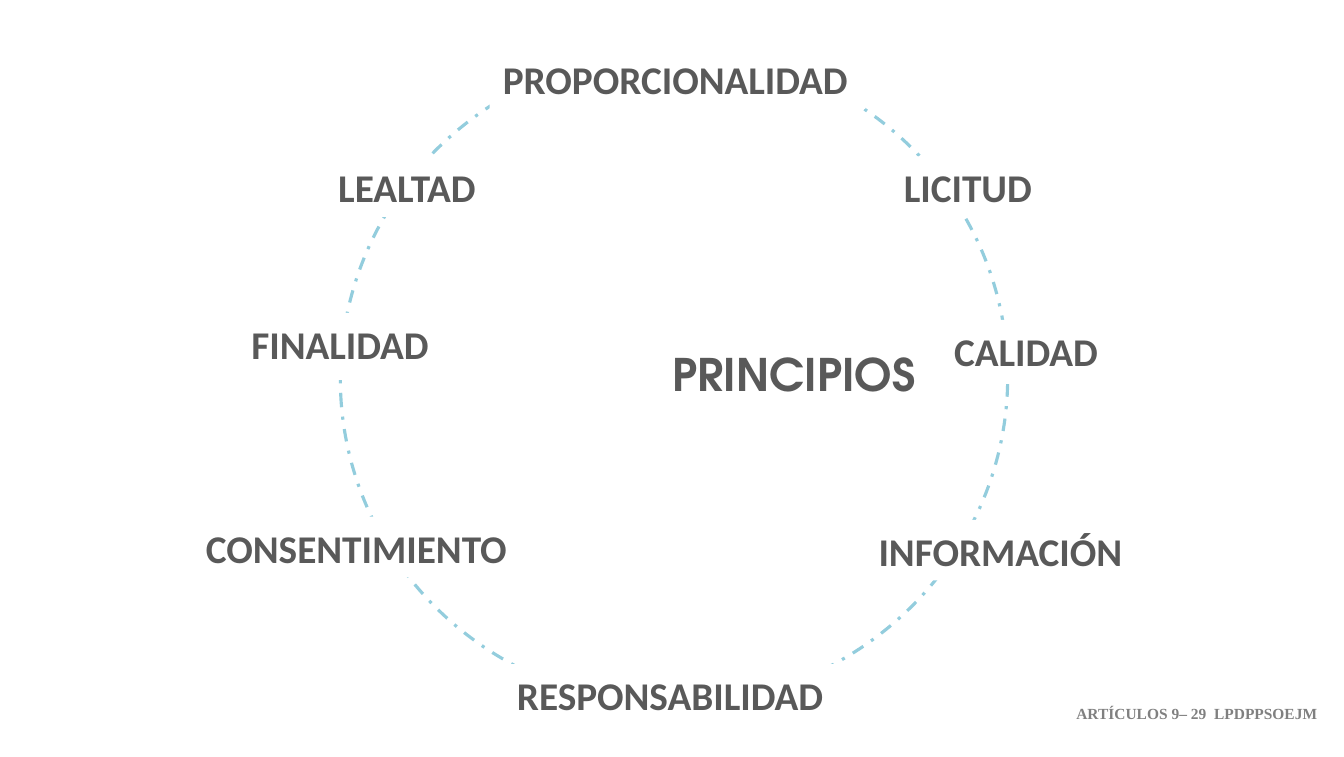
import pptx
import pptx.dml.color
import pptx.enum.dml
import pptx.enum.shapes
import pptx.enum.text
import pptx.util

RGBColor = pptx.dml.color.RGBColor
Inches = pptx.util.Inches
Pt = pptx.util.Pt
MSO_SHAPE = pptx.enum.shapes.MSO_SHAPE
PP_ALIGN = pptx.enum.text.PP_ALIGN
MSO_ANCHOR = pptx.enum.text.MSO_ANCHOR

WHITE = RGBColor(0xFF, 0xFF, 0xFF)
DARK_GREY = RGBColor(0x59, 0x59, 0x59)
MID_GREY = RGBColor(0x80, 0x80, 0x80)
LIGHT_BLUE = RGBColor(0x93, 0xCD, 0xDD)

SLIDE_WIDTH = Inches(13.31)
SLIDE_HEIGHT = Inches(7.5)
LABEL_HEIGHT = 8

# Principles around the ring: text, left, top, width (percent of the slide)
PRINCIPLES = [
    ("LICITUD", 66.27, 20.67, 11.65),
    ("CALIDAD", 70.02, 42.27, 12.85),
    ("CONSENTIMIENTO", 14.35, 68.27, 24.64),
    ("LEALTAD", 24.19, 20.67, 12.4),
    ("PROPORCIONALIDAD", 36.44, 6.4, 27.95),
    ("INFORMACIÓN", 64.39, 68.67, 20.36),
    ("RESPONSABILIDAD", 37.49, 87.73, 25.02),
    ("FINALIDAD", 17.73, 41.33, 15.4),
]


def area(left, top, width, height):
    """Turn percentages of the slide into lengths."""
    return (int(SLIDE_WIDTH * left / 100), int(SLIDE_HEIGHT * top / 100),
            int(SLIDE_WIDTH * width / 100), int(SLIDE_HEIGHT * height / 100))


def write(box, text, font_name, size, color, align=PP_ALIGN.LEFT,
          anchor=MSO_ANCHOR.TOP, wrap=False):
    frame = box.text_frame
    frame.text = text
    frame.word_wrap = wrap
    frame.vertical_anchor = anchor
    frame.margin_left = frame.margin_right = Inches(0.13)
    frame.margin_top = frame.margin_bottom = Inches(0.07)
    para = frame.paragraphs[0]
    para.alignment = align
    span = para.runs[0]
    span.font.name = font_name
    span.font.size = Pt(size)
    span.font.bold = True
    span.font.color.rgb = color
    return span


def add_ring(page):
    ring = page.shapes.add_shape(MSO_SHAPE.OVAL, *area(25.32, 6.8, 49.66, 86.27))
    ring.shadow.inherit = False
    ring.rotation = 355.3
    ring.fill.background()
    ring.line.color.rgb = LIGHT_BLUE
    ring.line.width = Pt(2.25)
    ring.line.dash_style = pptx.enum.dml.MSO_LINE.DASH_DOT


def add_principle(page, text, left, top, width):
    box = page.shapes.add_shape(MSO_SHAPE.RECTANGLE,
                                *area(left, top, width, LABEL_HEIGHT))
    box.shadow.inherit = False
    box.fill.solid()
    box.fill.fore_color.rgb = WHITE
    box.line.fill.background()
    write(box, text, "Calibri", 28, DARK_GREY)


def main():
    deck = pptx.Presentation()
    deck.slide_width = SLIDE_WIDTH
    deck.slide_height = SLIDE_HEIGHT
    page = deck.slides.add_slide(deck.slide_layouts[6])

    # Source note
    note = page.shapes.add_textbox(*area(79.11, 92.13, 20.06, 6.67))
    write(note, "ARTÍCULOS 9– 29  LPDPPSOEJM", "Times New Roman", 11, MID_GREY)

    # Central title in small capitals
    title = page.shapes.add_textbox(*area(32.31, 41.73, 35.46, 15.33))
    span = write(title, "PRINCIPIOS", "TeX Gyre Adventor", 32, DARK_GREY,
                 PP_ALIGN.CENTER, MSO_ANCHOR.MIDDLE, wrap=True)
    span.font._element.set("cap", "small")

    # Ring with its principles
    add_ring(page)
    for principle in PRINCIPLES:
        add_principle(page, *principle)

    deck.save("out.pptx")


if __name__ == "__main__":
    main()
